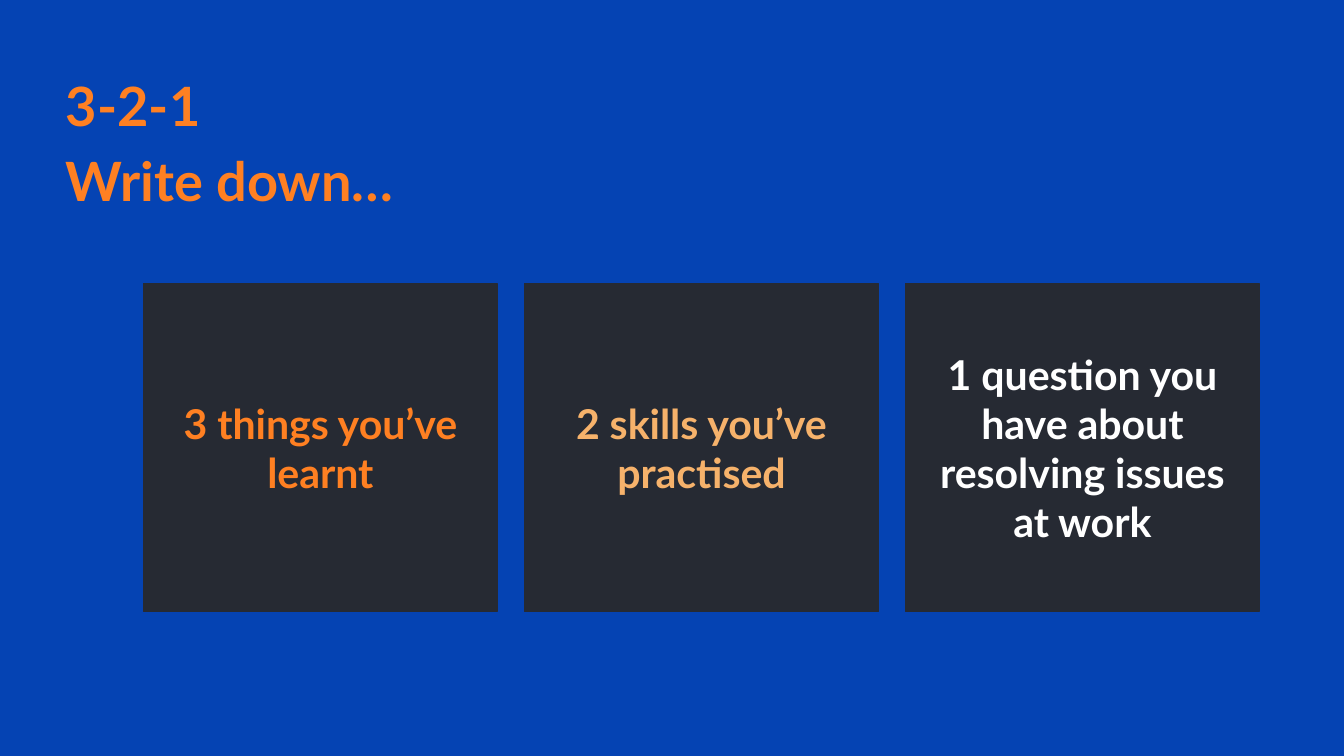
from pptx import Presentation
from pptx.dml.color import RGBColor
from pptx.enum.shapes import MSO_SHAPE
from pptx.enum.text import MSO_ANCHOR, PP_ALIGN
from pptx.util import Pt

RECTANGLE = MSO_SHAPE.RECTANGLE
CENTER = PP_ALIGN.CENTER
LEFT = PP_ALIGN.LEFT
MIDDLE = MSO_ANCHOR.MIDDLE
TOP = MSO_ANCHOR.TOP

COLORS = {
    "background": "0543B3",
    "card": "262A33",
    "orange": "FF8022",
    "peach": "F6B26B",
    "white": "FFFFFF",
}

TITLE_LINES = ["3-2-1", "Write down…"]
CARDS = [
    ("3 things you’ve learnt", "orange"),
    ("2 skills you’ve practised", "peach"),
    ("1 question you have about resolving issues at work", "white"),
]

CARD_LEFT, CARD_TOP = 77, 151.9
CARD_WIDTH, CARD_HEIGHT = 189.4, 175.7
CARD_STEP = 204.1


def color(name):
    return RGBColor.from_string(COLORS[name])


def set_attributes(target, values):
    for name, value in values.items():
        setattr(target, name, value)


def write_text(shape, lines, size, color_name, margin, anchor, paragraph_format):
    frame = shape.text_frame
    set_attributes(frame, {
        "word_wrap": True,
        "vertical_anchor": anchor,
        "margin_left": Pt(margin),
        "margin_top": Pt(margin),
        "margin_right": Pt(margin),
        "margin_bottom": Pt(margin),
    })
    frame.text = "\n".join(lines)
    for paragraph in frame.paragraphs:
        set_attributes(paragraph, paragraph_format)
        set_attributes(paragraph.font, {"name": "Lato", "size": Pt(size), "bold": True})
        paragraph.font.color.rgb = color(color_name)


def add_title(slide, lines):
    shape = slide.shapes.add_textbox(Pt(35.3), Pt(33.8), Pt(566), Pt(61.2))
    write_text(shape, lines, 29, "orange", 0, TOP,
               {"alignment": LEFT, "line_spacing": 1.15})


def add_card(slide, left, text, color_name):
    shape = slide.shapes.add_shape(
        RECTANGLE, Pt(left), Pt(CARD_TOP), Pt(CARD_WIDTH), Pt(CARD_HEIGHT))
    shape.shadow.inherit = False
    shape.fill.solid()
    shape.fill.fore_color.rgb = color("card")
    shape.line.color.rgb = color("card")
    shape.line.width = Pt(0.75)
    write_text(shape, [text], 22, color_name, 7.2, MIDDLE, {"alignment": CENTER})


def main():
    presentation = Presentation()
    set_attributes(presentation, {"slide_width": Pt(720), "slide_height": Pt(405)})
    slide = presentation.slides.add_slide(presentation.slide_layouts[6])

    # Background
    slide.background.fill.solid()
    slide.background.fill.fore_color.rgb = color("background")

    # Title
    add_title(slide, TITLE_LINES)

    # Row of evenly spaced cards
    for index, (text, color_name) in enumerate(CARDS):
        add_card(slide, CARD_LEFT + index * CARD_STEP, text, color_name)

    presentation.save("out.pptx")


if __name__ == "__main__":
    main()
